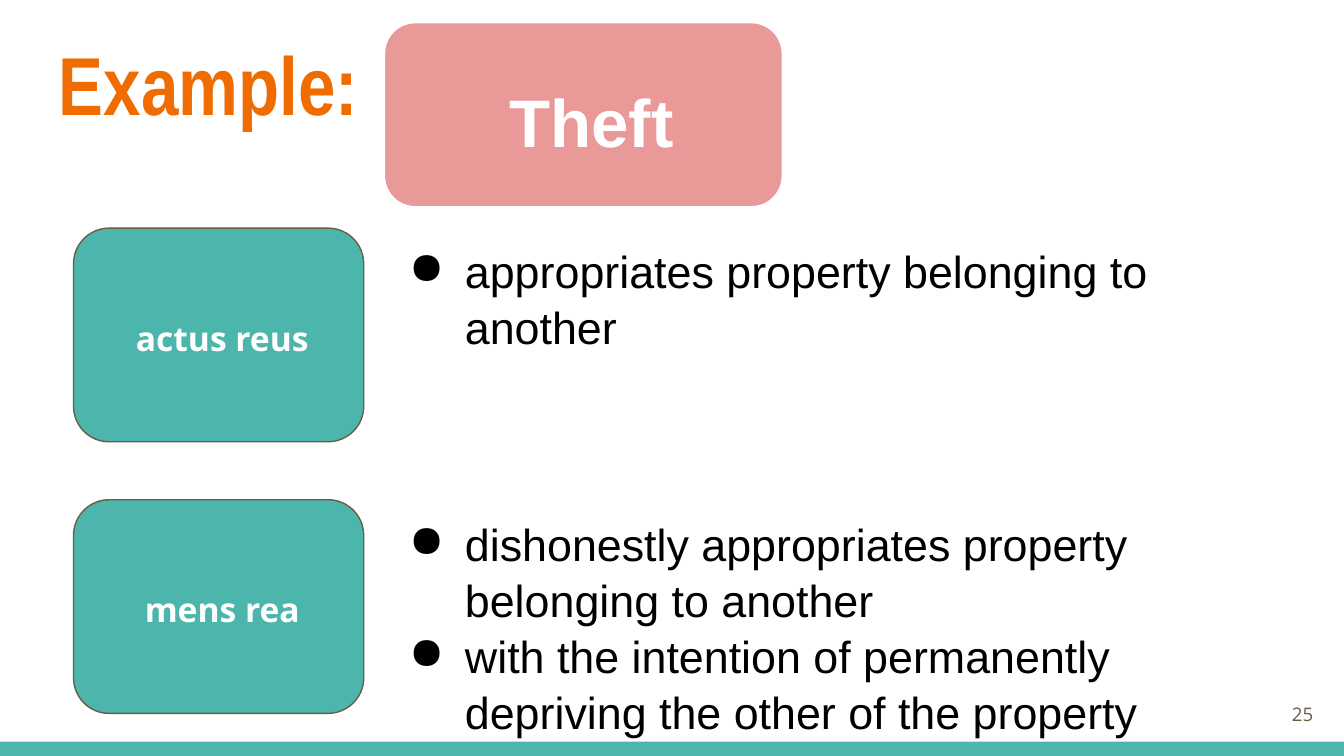
from lxml.etree import SubElement
from pptx import Presentation
from pptx.dml.color import RGBColor
from pptx.enum.shapes import MSO_SHAPE
from pptx.enum.text import MSO_ANCHOR, PP_ALIGN
from pptx.oxml.ns import qn
from pptx.util import Pt

TEAL = RGBColor(0x4D, 0xB6, 0xAC)
ORANGE = RGBColor(0xEF, 0x6C, 0x00)
PINK = RGBColor(0xEA, 0x99, 0x99)
BROWN = RGBColor(0x69, 0x5D, 0x46)
WHITE = RGBColor(0xFF, 0xFF, 0xFF)
BLACK = RGBColor(0x00, 0x00, 0x00)

TITLE = {"name": "Arial Narrow", "size": Pt(44), "bold": True, "color": ORANGE}
CRIME = {"name": "Arial", "size": Pt(36), "bold": True, "color": WHITE}
LABEL = {"name": "Open Sans", "size": Pt(18), "bold": True, "color": WHITE}
BODY = {"name": "Arial", "size": Pt(24), "color": BLACK}
NUMBER = {"name": "Open Sans", "size": Pt(10), "color": BROWN}

GAP = 86.4
POINTS = [
    ("appropriates property belonging to another", 0),
    ("dishonestly appropriates property belonging to another", GAP),
    ("with the intention of permanently depriving the other of the property", 0),
]


def style(font, form):
    for key, value in form.items():
        if key == "color":
            font.color.rgb = value
        else:
            setattr(font, key, value)


def set_frame(frame, anchor):
    form = {"word_wrap": True, "vertical_anchor": anchor}
    for side in ("left", "top", "right", "bottom"):
        form["margin_" + side] = Pt(7.2)
    for key, value in form.items():
        setattr(frame, key, value)


def add_line(para, text, form, align=PP_ALIGN.LEFT):
    para.alignment = align
    run = para.add_run()
    run.text = text
    style(run.font, form)


def add_frame(slide, box, anchor=MSO_ANCHOR.TOP):
    frame = slide.shapes.add_textbox(*map(Pt, box)).text_frame
    set_frame(frame, anchor)
    return frame


def add_block(slide, box, kind, fill, edge=None):
    shape = slide.shapes.add_shape(kind, *map(Pt, box))
    shape.shadow.inherit = False
    shape.fill.solid()
    shape.fill.fore_color.rgb = fill
    if edge is None:
        shape.line.fill.background()
    else:
        shape.line.color.rgb = edge
        shape.line.width = Pt(0.75)
    return shape


def add_card(slide, box, kind, fill, edge, text, form):
    frame = add_block(slide, box, kind, fill, edge).text_frame
    set_frame(frame, MSO_ANCHOR.MIDDLE)
    para = frame.paragraphs[0]
    para.line_spacing = 1.15
    para._p.get_or_add_pPr().set("marL", str(Pt(8.64)))
    add_line(para, text, form, PP_ALIGN.CENTER)


def add_bullet(para):
    props = para._p.get_or_add_pPr()
    props.set("marL", str(Pt(36)))
    props.set("indent", str(Pt(-30)))
    color = SubElement(props, qn("a:buClr"))
    SubElement(color, qn("a:srgbClr")).set("val", str(BLACK))
    SubElement(props, qn("a:buChar")).set("char", "●")


def add_title(slide, box):
    add_line(add_frame(slide, box).paragraphs[0], "Example:", TITLE)


def add_body(slide, box):
    frame = add_frame(slide, box)
    for pos, (text, gap) in enumerate(POINTS):
        para = frame.add_paragraph() if pos else frame.paragraphs[0]
        add_bullet(para)
        para.line_spacing = 1.04
        if gap:
            para.space_before = Pt(gap)
        add_line(para, text, BODY)


def add_labels(slide, box):
    left, top, width, height = box
    tall = 114.5
    step = height - tall
    for row, text in enumerate(("actus reus ", "mens rea ")):
        place = (left, top + row * step, width, tall)
        kind = MSO_SHAPE.FLOWCHART_ALTERNATE_PROCESS
        add_card(slide, place, kind, TEAL, BROWN, text, LABEL)


def add_number(slide, box):
    para = add_frame(slide, box, MSO_ANCHOR.MIDDLE).paragraphs[0]
    add_line(para, "25", NUMBER, PP_ALIGN.RIGHT)


def main():
    deck = Presentation()
    deck.slide_width, deck.slide_height = Pt(720), Pt(405)
    slide = deck.slides.add_slide(deck.slide_layouts[6])
    add_block(slide, (0, 397.4, 720, 7.6), MSO_SHAPE.RECTANGLE, TEAL)
    add_title(slide, (24.5, 10.8, 671, 55.4))
    add_body(slide, (206, 122.4, 473.8, 260))
    add_number(slide, (667.4, 367.2, 43.2, 31))
    crime = (206, 12.2, 213.1, 98.6)
    add_card(slide, crime, MSO_SHAPE.ROUNDED_RECTANGLE, PINK, WHITE, "Theft", CRIME)
    add_labels(slide, (39.4, 122.2, 155.5, 260))
    deck.save("out.pptx")


if __name__ == "__main__":
    main()
